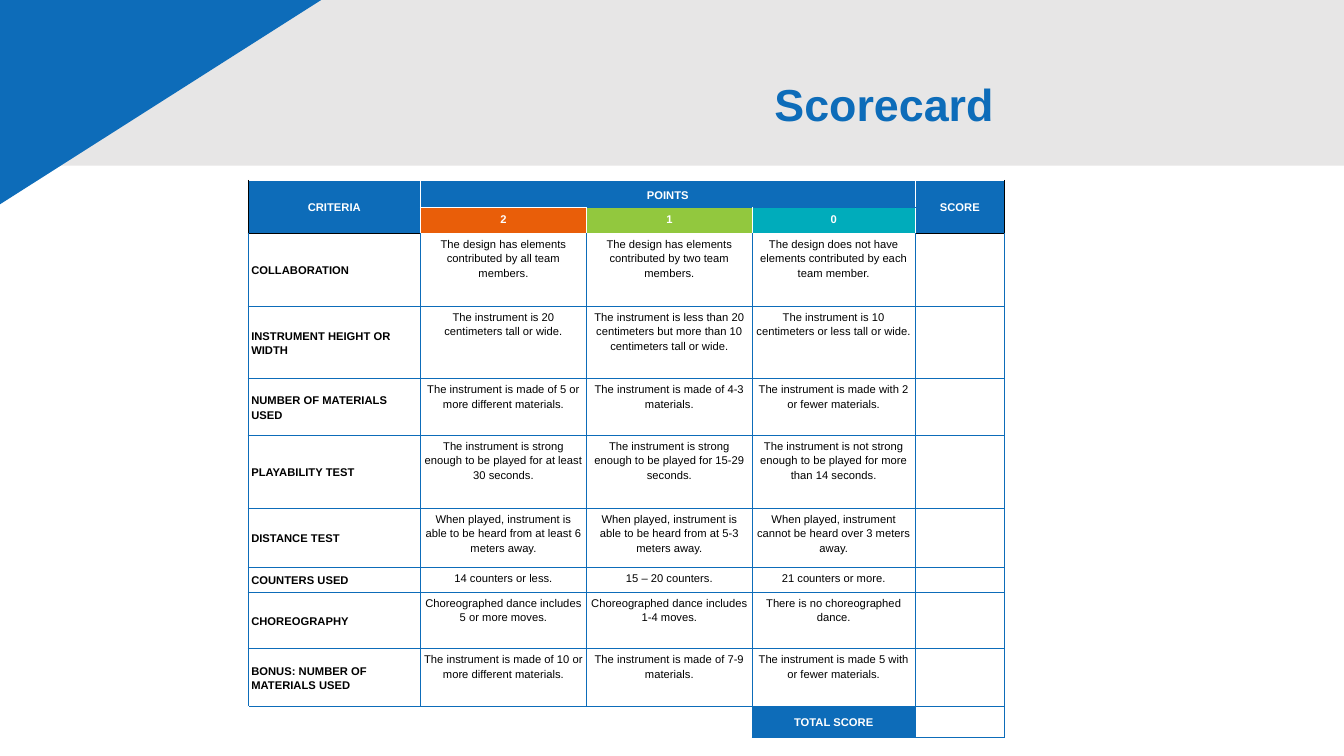
from lxml import etree
from pptx import Presentation
from pptx.dml.color import RGBColor
from pptx.enum.shapes import MSO_SHAPE
from pptx.enum.text import MSO_ANCHOR, PP_ALIGN
from pptx.oxml.ns import qn
from pptx.util import Pt

RECTANGLE, RIGHT_TRIANGLE = MSO_SHAPE.RECTANGLE, MSO_SHAPE.RIGHT_TRIANGLE
LEFT, CENTER, RIGHT = PP_ALIGN.LEFT, PP_ALIGN.CENTER, PP_ALIGN.RIGHT
TOP, MIDDLE = MSO_ANCHOR.TOP, MSO_ANCHOR.MIDDLE

BLUE, GRAY, WHITE, BLACK = "0D6CB9", "E7E6E6", "FFFFFF", "000000"
POINT_COLORS = ["E95E09", "92C83E", "00ACBB"]
COLUMN_WIDTHS = [123, 118.7, 118.3, 116.5, 63.8]
ROW_HEIGHTS = [19.6, 18.2, 52.1, 51.8, 40.4, 52.1, 42.1, 17.9, 40.4, 41.1, 22.5]
TOTAL_ROW = len(ROW_HEIGHTS) - 1

SCORECARD = [
    ["CRITERIA", "POINTS", "", "", "SCORE"],
    ["", "2", "1", "0", ""],
    ["COLLABORATION",
     "The design has elements contributed by all team members.",
     "The design has elements contributed by two team members.",
     "The design does not have elements contributed by each team member.", ""],
    ["INSTRUMENT HEIGHT OR WIDTH",
     "The instrument is 20 centimeters tall or wide.",
     "The instrument is less than 20 centimeters but more than 10 centimeters tall or wide.",
     "The instrument is 10 centimeters or less tall or wide.", ""],
    ["NUMBER OF MATERIALS USED",
     "The instrument is made of 5 or more different materials.",
     "The instrument is made of 4-3 materials.",
     "The instrument is made with 2 or fewer materials.", ""],
    ["PLAYABILITY TEST",
     "The instrument is strong enough to be played for at least 30 seconds.",
     "The instrument is strong enough to be played for 15-29 seconds.",
     "The instrument is not strong enough to be played for more than 14 seconds.", ""],
    ["DISTANCE TEST",
     "When played, instrument is able to be heard from at least 6 meters away.",
     "When played, instrument is able to be heard from at 5-3 meters away.",
     "When played, instrument cannot be heard over 3 meters away.", ""],
    ["COUNTERS USED", "14 counters or less.", "15 – 20 counters.",
     "21 counters or more.", ""],
    ["CHOREOGRAPHY",
     "Choreographed dance includes 5 or more moves.",
     "Choreographed dance includes 1-4 moves.",
     "There is no choreographed dance.", ""],
    ["BONUS: NUMBER OF MATERIALS USED",
     "The instrument is made of 10 or more different materials.",
     "The instrument is made of 7-9 materials.",
     "The instrument is made 5 with or fewer materials.", ""],
    ["", "", "", "TOTAL SCORE", ""],
]


def rgb(color):
    """Return the colour for a hex string."""
    return RGBColor.from_string(color)


def add_panel(slide, preset, left, top, width, height, color):
    """Add a plain filled shape to the slide header and return it."""
    panel = slide.shapes.add_shape(preset, Pt(left), Pt(top), Pt(width), Pt(height))
    panel.shadow.inherit = False
    panel.fill.solid()
    panel.fill.fore_color.rgb = rgb(color)
    panel.line.fill.background()
    return panel


def style_paragraph(paragraph, size, color, bold, align, spacing):
    """Set the font and layout of a paragraph."""
    paragraph.alignment = align
    paragraph.line_spacing = spacing
    font = paragraph.font
    font.name, font.size, font.bold = "Arial", Pt(size), bold
    font.color.rgb = rgb(color)


def place_title(slide, text):
    """Fill the title placeholder and bring it in front of the header."""
    title = slide.shapes.title
    title.left, title.top, title.width, title.height = Pt(18.7), Pt(24.5), Pt(698.4), Pt(104.4)
    title.text_frame.text = text
    title.text_frame.vertical_anchor = MIDDLE
    style_paragraph(title.text_frame.paragraphs[0], 32, BLUE, True, RIGHT, 0.9)
    title.element.getparent().append(title.element)


def border_colors(row, column):
    """Return the left, right, top and bottom border colours of a cell."""
    outer = column in (0, 4)
    if row < 2 and outer:
        return (BLACK if column == 0 else WHITE, BLACK if column == 4 else WHITE, WHITE, BLACK)
    if row < 2:
        inner = BLUE if column > 1 else WHITE
        return (WHITE, WHITE, inner, WHITE) if row else (WHITE, WHITE, WHITE, inner)
    if row == 2:
        return BLUE, BLUE, BLACK if outer else WHITE, BLUE
    if row == TOTAL_ROW and column < 3:
        return WHITE, BLUE, BLUE, WHITE
    return (BLUE,) * 4


def fill_color(row, column):
    """Return the fill colour of a cell."""
    if row == 1 and 0 < column < 4:
        return POINT_COLORS[column - 1]
    return BLUE if row < 2 or (row, column) == (TOTAL_ROW, 3) else WHITE


def format_cell(cell, text, row, column):
    """Write one scorecard cell with its borders, fill and text style."""
    properties = cell._tc.get_or_add_tcPr()
    for side, color in zip("LRTB", border_colors(row, column)):
        line = etree.SubElement(properties, qn(f"a:ln{side}"), w=str(Pt(1)))
        solid = etree.SubElement(line, qn("a:solidFill"))
        etree.SubElement(solid, qn("a:srgbClr"), val=color)
    fill = fill_color(row, column)
    cell.fill.solid()
    cell.fill.fore_color.rgb = rgb(fill)
    cell.margin_left = cell.margin_right = cell.margin_top = cell.margin_bottom = Pt(2.2)
    header = fill != WHITE
    cell.vertical_anchor = MIDDLE if column == 0 or (header and row != 1) else TOP
    if text:
        cell.text = text
    paragraph = cell.text_frame.paragraphs[0]
    if not text:
        paragraph._p.get_or_add_endParaRPr().set("sz", "800")
    style_paragraph(paragraph, 8, WHITE if header else BLACK, header or column == 0,
                    CENTER if header or column else LEFT, 1.15)


def add_scorecard(slide):
    """Add the scoring table."""
    table = slide.shapes.add_table(
        len(ROW_HEIGHTS), len(COLUMN_WIDTHS), Pt(177.3), Pt(128.9),
        Pt(sum(COLUMN_WIDTHS)), Pt(sum(ROW_HEIGHTS))).table
    table.first_row = table.horz_banding = False
    for column, width in zip(table.columns, COLUMN_WIDTHS):
        column.width = Pt(width)
    for row, height in zip(table.rows, ROW_HEIGHTS):
        row.height = Pt(height)
    for row, texts in enumerate(SCORECARD):
        for column, text in enumerate(texts):
            format_cell(table.cell(row, column), text, row, column)
    for first, last in [((0, 0), (1, 0)), ((0, 1), (0, 3)), ((0, 4), (1, 4)),
                        ((TOTAL_ROW, 0), (TOTAL_ROW, 2))]:
        table.cell(*first).merge(table.cell(*last))


def main():
    """Build the scorecard slide and save it."""
    deck = Presentation()
    deck.slide_width, deck.slide_height = Pt(960), Pt(540)
    slide = deck.slides.add_slide(deck.slide_layouts[5])
    add_panel(slide, RECTANGLE, -18.7, -13.7, 978.7, 132, GRAY)
    corner = add_panel(slide, RIGHT_TRIANGLE, -185, -123.8, 609.1, 387.4, BLUE)
    corner.element.spPr.find(qn("a:xfrm")).set("flipV", "1")
    place_title(slide, "Scorecard")
    add_scorecard(slide)
    deck.save("out.pptx")


if __name__ == "__main__":
    main()
